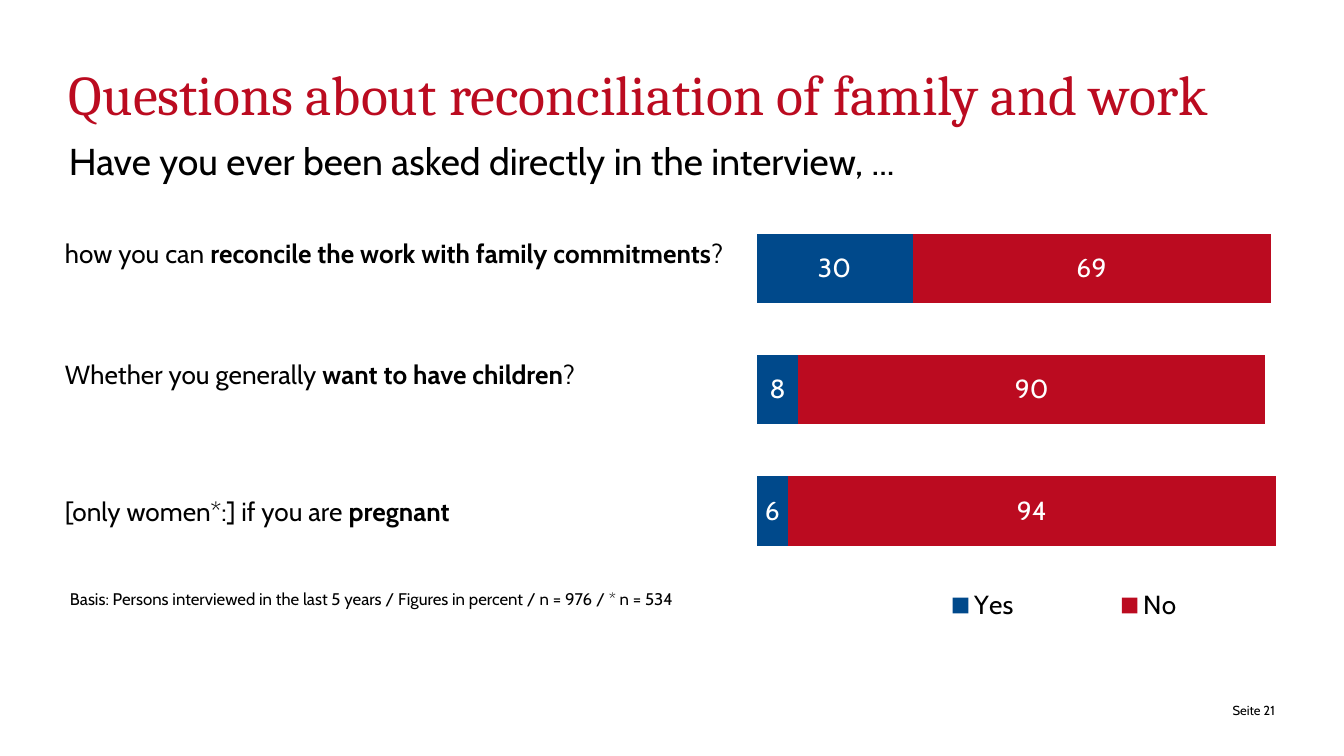
"""Build the slide on interview questions about family and work."""
import pptx
import pptx.chart.data
import pptx.dml.color
import pptx.enum.chart
import pptx.enum.text
import pptx.oxml
import pptx.oxml.ns
import pptx.util

PX = 6804
RED = pptx.dml.color.RGBColor(0xBB, 0x0B, 0x20)
BLUE = pptx.dml.color.RGBColor(0x00, 0x49, 0x8B)
BLACK = pptx.dml.color.RGBColor(0, 0, 0)
WHITE = pptx.dml.color.RGBColor(255, 255, 255)
LEFT, WIDTH = 69, 1207


def write_text(shape, box, runs, size, font="Cabin", color=BLACK, insets=(0, 0, 0, 0),
               align=pptx.enum.text.PP_ALIGN.LEFT, line_spacing=1.0):
    shape.left, shape.top, shape.width, shape.height = [value * PX for value in box]
    frame = shape.text_frame
    frame.word_wrap = True
    frame.auto_size = pptx.enum.text.MSO_AUTO_SIZE.NONE
    frame.vertical_anchor = pptx.enum.text.MSO_ANCHOR.TOP
    frame.margin_left, frame.margin_top, frame.margin_right, frame.margin_bottom = [
        value * PX for value in insets]
    paragraph = frame.paragraphs[0]
    paragraph.alignment = align
    paragraph.line_spacing = line_spacing
    for text, bold in runs:
        run = paragraph.add_run()
        run.text = text
        run.font.name = font
        run.font.size = pptx.util.Pt(size)
        run.font.bold = bold
        run.font.color.rgb = color


def place_in_chart(element, position, x, y, width, height, target=""):
    for old_layout in element.findall(pptx.oxml.ns.qn("c:layout")):
        element.remove(old_layout)
    element.insert(position, pptx.oxml.parse_xml(
        f'<c:layout {pptx.oxml.ns.nsdecls("c")}><c:manualLayout>{target}'
        '<c:xMode val="edge"/><c:yMode val="edge"/>'
        f'<c:x val="{x}"/><c:y val="{y}"/><c:w val="{width}"/><c:h val="{height}"/>'
        '</c:manualLayout></c:layout>'))


presentation = pptx.Presentation()
presentation.slide_width = 1344 * PX
presentation.slide_height = 756 * PX
slide = presentation.slides.add_slide(presentation.slide_layouts[5])

chart_data = pptx.chart.data.CategoryChartData(number_format="0")
chart_data.categories = ["1", "2", "3"]
chart_data.add_series("Yes", (6, 8, 30))
chart_data.add_series("No", (94, 90, 69))
chart = slide.shapes.add_chart(
    pptx.enum.chart.XL_CHART_TYPE.BAR_STACKED,
    LEFT * PX, 208 * PX, WIDTH * PX, 423 * PX, chart_data).chart
chart.has_title = False
chart.font.name = "Cabin"
chart.font.size = pptx.util.Pt(12)
chart.font.color.rgb = BLACK
chart.category_axis.visible = False
value_axis = chart.value_axis
value_axis.minimum_scale = 0
value_axis.maximum_scale = 100
value_axis.has_major_gridlines = False
value_axis.major_tick_mark = pptx.enum.chart.XL_TICK_MARK.NONE
value_axis.tick_label_position = pptx.enum.chart.XL_TICK_LABEL_POSITION.NONE
value_axis.format.line.fill.background()

plot = chart.plots[0]
plot.gap_width = 75
plot.overlap = 100
plot.vary_by_categories = False
for series, color in zip(plot.series, (BLUE, RED)):
    series.format.fill.solid()
    series.format.fill.fore_color.rgb = color
    labels = series.data_labels
    labels.show_value = True
    labels.number_format = "0"
    labels.number_format_is_linked = False
    labels.position = pptx.enum.chart.XL_LABEL_POSITION.CENTER
    labels.font.name = "Cabin"
    labels.font.size = pptx.util.Pt(14)
    labels.font.color.rgb = WHITE

chart.has_legend = True
legend = chart.legend
legend.position = pptx.enum.chart.XL_LEGEND_POSITION.BOTTOM
legend.include_in_layout = False
legend.font.name = "Cabin"
legend.font.size = pptx.util.Pt(14)
legend.font.color.rgb = BLACK
plot_area = chart.element.find(".//" + pptx.oxml.ns.qn("c:plotArea"))
legend_element = chart.element.find(".//" + pptx.oxml.ns.qn("c:legend"))
place_in_chart(plot_area, 0, 0.57, 0, 0.43, 0.86, '<c:layoutTarget val="inner"/>')
place_in_chart(legend_element, 1, 0.65, 0.9, 0.35, 0.09)

write_text(slide.shapes.title, (LEFT, 60, WIDTH, 126),
           [("Questions about reconciliation of family and work", False)],
           size=30, font="Cambria", color=RED)

captions = [
    ((LEFT, 134, WIDTH, 63), "Have you ever been asked directly in the interview, ...",
     {"size": 20, "line_spacing": 1.1}),
    ((1140, 695, 135, 22), "Seite 21",
     {"size": 7, "insets": (0, 7, 0, 0), "align": pptx.enum.text.PP_ALIGN.RIGHT}),
    ((70, 587, WIDTH, 16),
     "Basis: Persons interviewed in the last 5 years / Figures in percent / n = 976 / * n = 534",
     {"size": 9, "line_spacing": 1.1}),
]
for box, text, text_format in captions:
    write_text(slide.shapes.add_textbox(0, 0, 0, 0), box, [(text, False)], **text_format)

questions = [
    (230, [("how you can ", False), ("reconcile the work with family commitments", True),
           ("?", False)]),
    (351, [("Whether you generally ", False), ("want to have children", True), ("?", False)]),
    (488, [("[only women*:] if you are ", False), ("pregnant", True)]),
]
for top, runs in questions:
    write_text(slide.shapes.add_textbox(0, 0, 0, 0), (52, top, 809, 46), runs,
               size=14, insets=(13, 7, 13, 7))

presentation.save("out.pptx")
